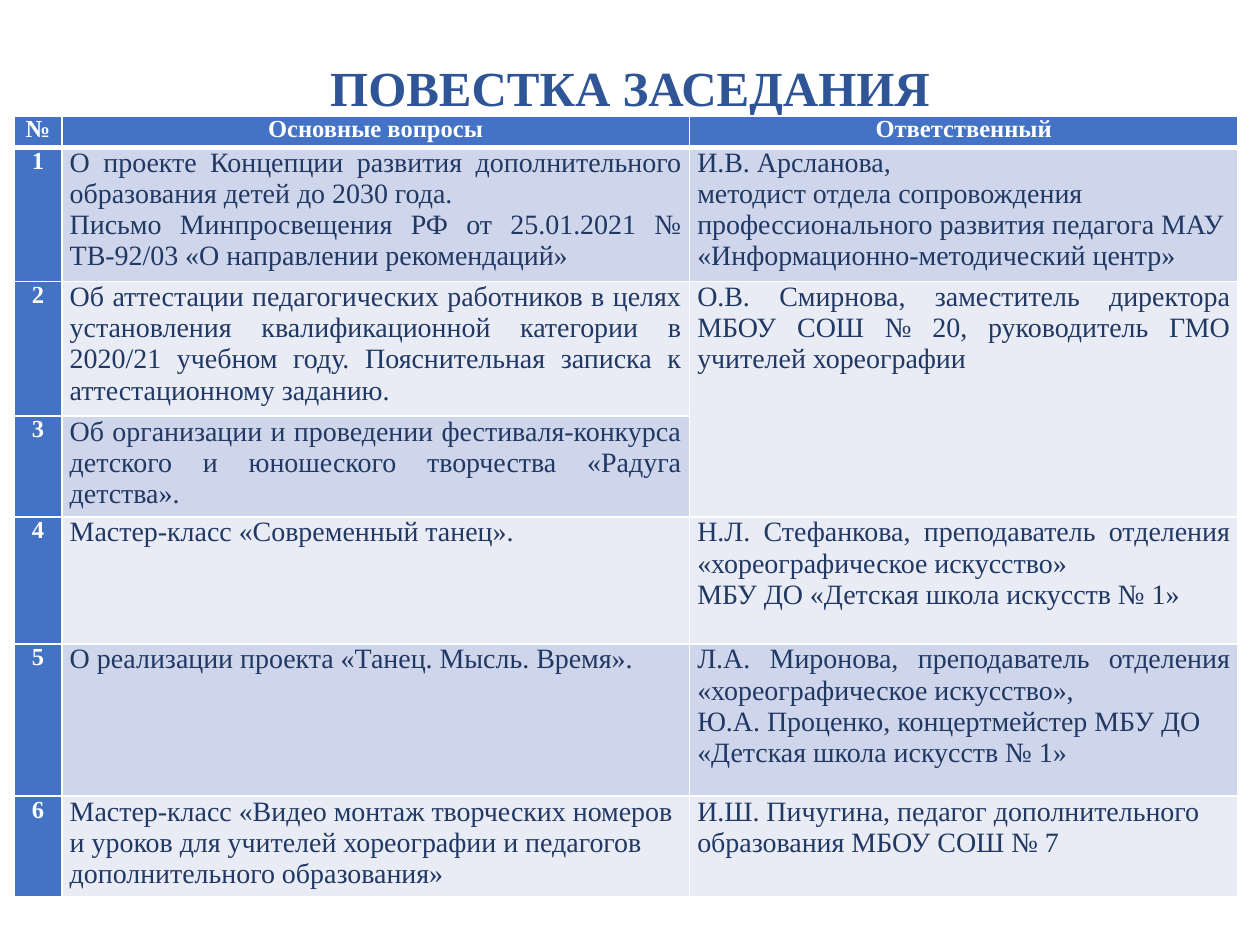
"""Build the meeting agenda slide: a title above a table of questions and speakers."""
from lxml import etree
from pptx import Presentation
from pptx import util as u
from pptx.dml.color import RGBColor
from pptx.enum import text
from pptx.oxml import ns

FONT = "Times New Roman"
COLORS = {
    "title": "2F5597", "header": "4472C4", "odd": "CFD5EA",
    "even": "E9EBF5", "body": "203864", "white": "FFFFFF",
}
CENTER = text.PP_ALIGN.CENTER
JUSTIFY = text.PP_ALIGN.JUSTIFY
LEFT = text.PP_ALIGN.LEFT

TITLE = "ПОВЕСТКА ЗАСЕДАНИЯ"
HEADERS = ["№", "Основные вопросы", "Ответственный"]
AGENDA = [
    ((JUSTIFY, ["О проекте Концепции развития дополнительного образования детей до 2030 года.",
                "Письмо Минпросвещения РФ от 25.01.2021 № ТВ-92/03 «О направлении рекомендаций»"]),
     (LEFT, ["И.В. Арсланова,",
             "методист отдела сопровождения профессионального развития педагога МАУ "
             "«Информационно-методический центр»"])),
    ((JUSTIFY, ["Об аттестации педагогических работников в целях установления квалификационной "
                "категории в 2020/21 учебном году. Пояснительная записка к аттестационному заданию."]),
     (JUSTIFY, ["О.В. Смирнова, заместитель директора МБОУ СОШ № 20, руководитель ГМО "
                "учителей хореографии"])),
    ((JUSTIFY, ["Об организации и проведении фестиваля-конкурса детского и юношеского "
                "творчества «Радуга детства»."]),
     None),
    ((JUSTIFY, ["Мастер-класс «Современный танец»."]),
     (JUSTIFY, ["Н.Л. Стефанкова, преподаватель отделения «хореографическое искусство»",
                "МБУ ДО «Детская школа искусств № 1»"])),
    ((JUSTIFY, ["О реализации проекта «Танец. Мысль. Время»."]),
     (JUSTIFY, ["Л.А. Миронова, преподаватель отделения «хореографическое искусство»,",
                "Ю.А. Проценко, концертмейстер МБУ ДО",
                "«Детская школа искусств № 1»"])),
    ((LEFT, ["Мастер-класс «Видео монтаж творческих номеров и уроков для учителей хореографии "
             "и педагогов дополнительного образования»"]),
     (LEFT, ["И.Ш. Пичугина, педагог дополнительного образования МБОУ СОШ № 7"])),
]
COLUMN_WIDTHS = [27.4, 358.6, 313.6]
ROW_HEIGHTS = [18, 72.6, 72.6, 53, 72.6, 87, 53]


def rgb(name):
    return RGBColor.from_string(COLORS[name])


def write(frame, lines, alignment, size, color, bold):
    for index, line in enumerate(lines):
        paragraph = frame.paragraphs[0] if index == 0 else frame.add_paragraph()
        paragraph.alignment = alignment
        run = paragraph.add_run()
        run.text = line
        run.font.name = FONT
        run.font.size = u.Pt(size)
        run.font.bold = bold
        run.font.color.rgb = rgb(color)


def style_cell(cell, fill, row):
    cell.margin_left = cell.margin_right = u.Pt(4.5)
    cell.margin_top = cell.margin_bottom = 0
    cell.fill.solid()
    cell.fill.fore_color.rgb = rgb(fill)
    widths = {"lnL": 1, "lnR": 1, "lnT": 3 if row == 1 else 1, "lnB": 3 if row == 0 else 1}
    properties = cell._tc.get_or_add_tcPr()
    for position, (side, width) in enumerate(widths.items()):
        line = etree.Element(ns.qn(f"a:{side}"), w=str(u.Pt(width)))
        solid = etree.SubElement(line, ns.qn("a:solidFill"))
        etree.SubElement(solid, ns.qn("a:srgbClr"), val=COLORS["white"])
        properties.insert(position, line)


def add_title(slide):
    box = slide.shapes.add_textbox(u.Pt(49.7), u.Pt(28.8), u.Pt(620.6), u.Pt(46))
    frame = box.text_frame
    frame.word_wrap = True
    frame.vertical_anchor = text.MSO_ANCHOR.MIDDLE
    write(frame, [TITLE], CENTER, 28, "title", True)
    frame.paragraphs[0].line_spacing = 0.9


def add_agenda(slide):
    shape = slide.shapes.add_table(
        len(ROW_HEIGHTS), len(COLUMN_WIDTHS), u.Pt(8), u.Pt(66.2),
        u.Pt(sum(COLUMN_WIDTHS)), u.Pt(sum(ROW_HEIGHTS)))
    table = shape.table
    table.first_col = True
    for column, width in zip(table.columns, COLUMN_WIDTHS):
        column.width = u.Pt(width)
    for row, height in zip(table.rows, ROW_HEIGHTS):
        row.height = u.Pt(height)

    for column, header in enumerate(HEADERS):
        cell = table.cell(0, column)
        style_cell(cell, "header", 0)
        write(cell.text_frame, [header], CENTER, 14, "white", True)

    for number, entries in enumerate(AGENDA, 1):
        cell = table.cell(number, 0)
        style_cell(cell, "header", number)
        write(cell.text_frame, [str(number)], CENTER, 14, "white", True)
        band = "odd" if number % 2 else "even"
        for column, entry in enumerate(entries, 1):
            cell = table.cell(number, column)
            style_cell(cell, band, number)
            if entry is None:
                table.cell(number - 1, column).merge(cell)
            else:
                alignment, lines = entry
                write(cell.text_frame, lines, alignment, 16, "body", False)


def main():
    presentation = Presentation()
    presentation.slide_width = u.Pt(720)
    presentation.slide_height = u.Pt(540)
    slide = presentation.slides.add_slide(presentation.slide_layouts[6])
    add_title(slide)
    add_agenda(slide)
    presentation.save("out.pptx")


if __name__ == "__main__":
    main()
